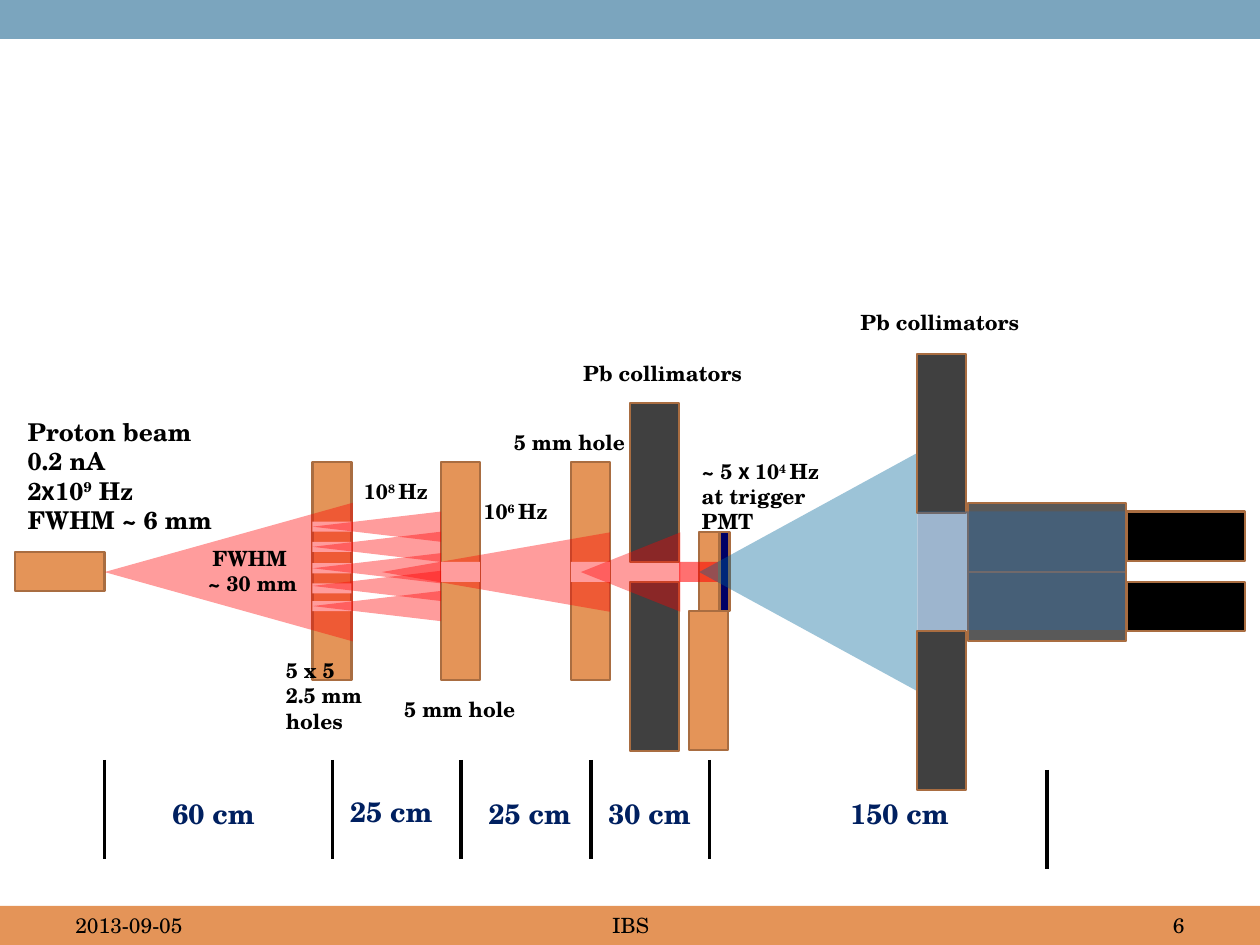
import pptx
import pptx.util
import pptx.dml.color
import pptx.enum.shapes
import pptx.enum.text
import pptx.oxml
import pptx.oxml.ns

Inches = pptx.util.Inches
Pt = pptx.util.Pt
RGBColor = pptx.dml.color.RGBColor
MSO_SHAPE = pptx.enum.shapes.MSO_SHAPE
PP_ALIGN = pptx.enum.text.PP_ALIGN
MSO_ANCHOR = pptx.enum.text.MSO_ANCHOR

ORANGE = RGBColor(0xE4, 0x94, 0x58)
HEADER_BLUE = RGBColor(0x7B, 0xA5, 0xBE)
OUTLINE = RGBColor(0xA9, 0x6D, 0x41)
WHITE = RGBColor(0xFF, 0xFF, 0xFF)
BLACK = RGBColor(0, 0, 0)
LEAD = RGBColor(0x40, 0x40, 0x40)
DETECTOR_GRAY = RGBColor(0x59, 0x59, 0x59)
TRIGGER_BLUE = RGBColor(0, 0, 0x66)
BEAM_RED = RGBColor(0xFF, 0, 0)
CONE_BLUE = RGBColor(0, 0x66, 0x99)
WINDOW_BLUE = RGBColor(0x33, 0x66, 0x99)
NAVY = RGBColor(0, 0x20, 0x60)

FONT = "TeX Gyre Schola"
TIMES_FONT = "Noto Sans CJK KR"
AXIS = 4.54
PLATE_WIDTH = 0.31

presentation = pptx.Presentation()
presentation.slide_width = Inches(10)
presentation.slide_height = Inches(7.5)
slide = presentation.slides.add_slide(presentation.slide_layouts[6])


def add_block(left, top, width, height, color, outlined=False, opacity=100, cone=False):
    """Draw a rectangle, or a cone opening to the right from its left edge."""
    kind = MSO_SHAPE.RECTANGLE
    if cone:
        kind = MSO_SHAPE.ISOSCELES_TRIANGLE
        left, top = left + (width - height) / 2, top + (height - width) / 2
        width, height = height, width
    shape = slide.shapes.add_shape(kind, Inches(left), Inches(top), Inches(width), Inches(height))
    shape.rotation = 270 if cone else 0
    shape.shadow.inherit = False
    shape.fill.solid()
    shape.fill.fore_color.rgb = color
    if opacity < 100:
        color_element = shape.fill._xPr.find(".//" + pptx.oxml.ns.qn("a:srgbClr"))
        alpha = pptx.oxml.parse_xml(
            f'<a:alpha {pptx.oxml.ns.nsdecls("a")} val="{opacity * 1000}"/>')
        color_element.append(alpha)
    if outlined:
        shape.line.color.rgb = OUTLINE
        shape.line.width = Pt(1.25)
    else:
        shape.line.fill.background()


def add_label(left, top, width, height, lines, size=12, color=BLACK, bold=True,
              align=PP_ALIGN.LEFT, wrap=False, anchor=MSO_ANCHOR.TOP):
    """Each line is a list of runs; ^ marks a superscript, * the other font."""
    frame = slide.shapes.add_textbox(
        Inches(left), Inches(top), Inches(width), Inches(height)).text_frame
    frame.word_wrap = wrap
    frame.vertical_anchor = anchor
    for index, pieces in enumerate(lines):
        paragraph = frame.add_paragraph() if index else frame.paragraphs[0]
        paragraph.alignment = align
        for piece in pieces:
            run = paragraph.add_run()
            run.text = piece.lstrip("^*")
            run.font.name = TIMES_FONT if piece.startswith("*") else FONT
            run.font.size = Pt(size)
            run.font.bold = bold
            run.font.color.rgb = color
            if piece.startswith("^"):
                run.font._element.set("baseline", "30000")


# Header and footer
add_block(0, 7.19, 10, 0.31, ORANGE)
add_block(0, 0, 10, 0.31, HEADER_BLUE)
for left, width, text, align in (
    (0.5, 2.33, "2013-09-05", PP_ALIGN.LEFT),
    (3.42, 3.17, "IBS", PP_ALIGN.CENTER),
    (7.17, 2.33, "6", PP_ALIGN.RIGHT),
):
    add_label(left, 7.19, width, 0.31, [[text]], bold=False, align=align,
              wrap=True, anchor=MSO_ANCHOR.MIDDLE)

# Beam exit and the three plates with their holes
add_block(0.12, 4.38, 0.71, 0.31, ORANGE, outlined=True)
for left in (2.48, 3.5, 4.53):
    add_block(left, 3.67, PLATE_WIDTH, 1.73, ORANGE, outlined=True)
for top in (4.14, 4.3, 4.47, 4.63, 4.77):
    add_block(2.48, top, PLATE_WIDTH, 0.08, WHITE)
for left in (3.5, 4.53):
    add_block(left, AXIS - 0.08, PLATE_WIDTH, 0.16, WHITE)

# First lead collimator, target and detectors
for left, top, width, height, color in (
    (5, 3.2, 0.39, 1.26, LEAD),
    (5, 4.62, 0.39, 1.34, LEAD),
    (5.55, 4.22, 0.16, 0.63, ORANGE),
    (5.47, 4.85, 0.31, 1.1, ORANGE),
    (7.68, 3.99, 1.26, 0.55, DETECTOR_GRAY),
    (7.68, 4.54, 1.26, 0.55, DETECTOR_GRAY),
    (8.94, 4.06, 0.94, 0.39, BLACK),
    (8.94, 4.62, 0.94, 0.39, BLACK),
):
    add_block(left, top, width, height, color, outlined=True)

# Distance scale
for x, top in ((0.83, 6.03), (2.64, 6.03), (3.66, 6.03), (4.69, 6.03), (5.63, 6.03), (8.31, 6.11)):
    tick = slide.shapes.add_connector(
        pptx.enum.shapes.MSO_CONNECTOR.STRAIGHT,
        Inches(x), Inches(top), Inches(x), Inches(top + 0.79))
    tick.line.color.rgb = BLACK
    tick.line.width = Pt(2)
    tick._element.spPr.append(
        pptx.oxml.parse_xml(f'<a:effectLst {pptx.oxml.ns.nsdecls("a")}/>'))
for left, top, width, text in (
    (1.27, 6.27, 0.91, "60 cm"),
    (2.68, 6.26, 0.88, "25 cm"),
    (3.78, 6.27, 0.88, "25 cm"),
    (4.73, 6.27, 0.9, "30 cm"),
    (6.65, 6.27, 1.01, "150 cm"),
):
    add_label(left, top, width, 0.37, [[text]], size=16, color=NAVY)

# Proton beam cones: apex, centre height, length, opening
small_cones = [(2.48, center, 1.02, 0.24) for center in (4.18, 4.34, 4.51, 4.65, 4.81)]
for apex, center, length, opening in (
    (0.83, AXIS, 1.97, 1.1),
    *small_cones,
    (3.03, AXIS, 1.81, 0.63),
    (4.61, AXIS, 0.79, 0.63),
):
    add_block(apex, center - opening / 2, length, opening, BEAM_RED, opacity=39, cone=True)
add_block(5.39, AXIS - 0.08, 0.31, 0.16, BEAM_RED, opacity=56)

# Beam labels
add_label(0.12, 3.26, 1.75, 1.04, [
    ["Proton beam"], ["0.2 nA"], ["2", "*x", "10", "^9", " Hz"], ["FWHM ~ 6 mm"]], size=14)
add_label(1.52, 4.28, 0.97, 0.5, [["FWHM "], ["~ 30 mm"]], align=PP_ALIGN.CENTER)
add_label(3.74, 3.91, 0.76, 0.3, [["10", "^6 ", "Hz"]])
add_label(2.79, 3.75, 0.8, 0.3, [["10", "^8 ", "Hz"]])
add_label(5.47, 3.59, 1.45, 0.5,
          [["~ 5 ", "*x ", "10", "^4 ", "Hz"], ["at trigger PMT"]], wrap=True)
add_label(2.17, 5.17, 0.89, 0.71, [["5 x 5"], ["2.5 mm"], ["holes"]])
for left, top in ((3.11, 5.48), (3.98, 3.36)):
    add_label(left, top, 1.42, 0.3, [["5 mm hole"]], wrap=True)

# Trigger, scattered cone and second lead collimator
add_block(5.71, 4.22, 0.08, 0.63, TRIGGER_BLUE, outlined=True)
add_block(5.55, AXIS - 0.945, 1.73, 1.89, CONE_BLUE, opacity=39, cone=True)
for top in (2.81, 5.01):
    add_block(7.28, top, 0.39, 1.26, LEAD, outlined=True)
add_block(7.28, 4.06, 1.65, 0.94, WINDOW_BLUE, opacity=48)
for left, top in ((6.73, 2.41), (4.53, 2.81)):
    add_label(left, top, 1.89, 0.3, [["Pb collimators"]], wrap=True)

presentation.save("out.pptx")
